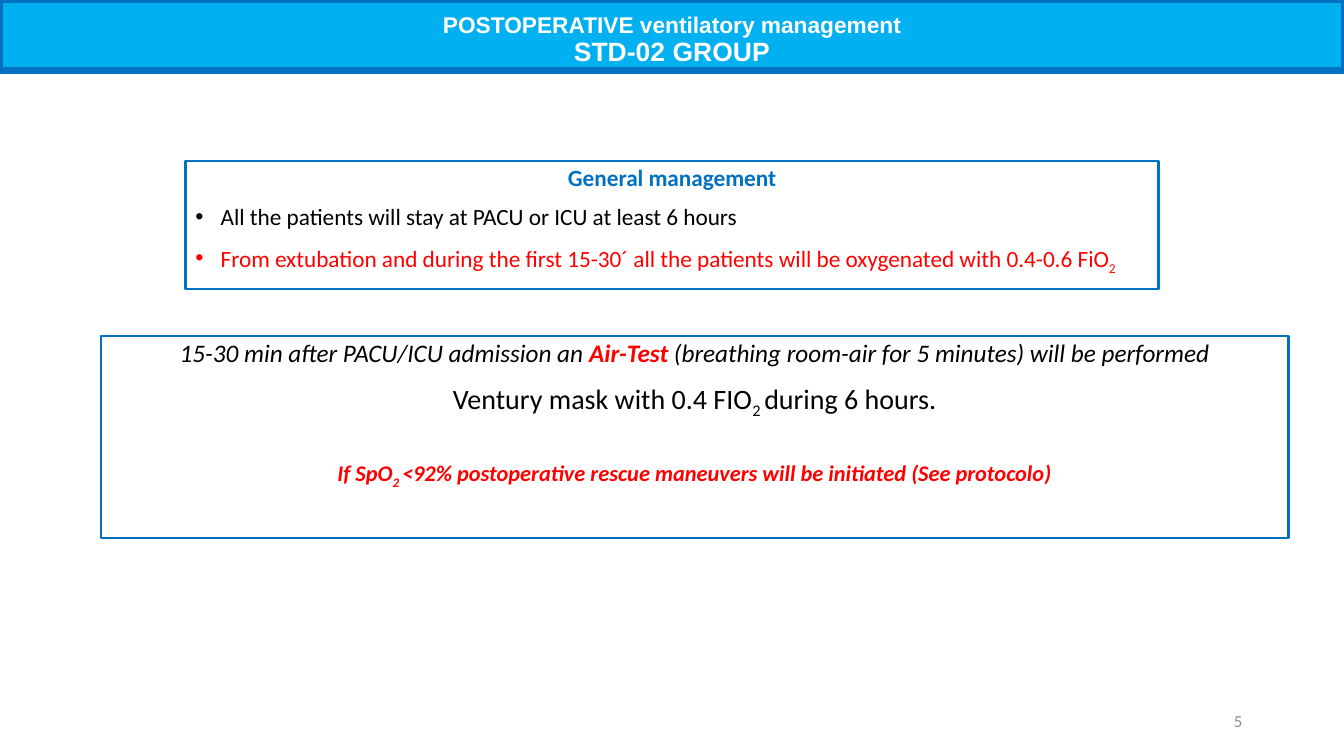
from pptx import Presentation
from pptx.util import Inches, Pt
from pptx.dml.color import RGBColor as RGB
from pptx.enum.shapes import MSO_SHAPE as Shape
from pptx.enum.text import PP_ALIGN as Align, MSO_ANCHOR as Anchor
from pptx.oxml.ns import qn
from lxml import etree

COLORS = {"sky": "00B0F0", "blue": "0070C0", "red": "FF0000",
          "black": "000000", "white": "FFFFFF", "gray": "8C8C8C"}


def write(para, text, size=16, color="black", font="Calibri",
          bold=False, italic=False, sub=False):
    run = para.add_run()
    run.text = text
    face = run.font
    face.name, face.size = font, Pt(size)
    face.bold, face.italic = bold, italic
    face.color.rgb = RGB.from_string(COLORS[color])
    if sub:
        run._r.get_or_add_rPr().set("baseline", "-25000")


def outline(shape, width):
    shape.line.color.rgb = RGB.from_string(COLORS["blue"])
    shape.line.width = Pt(width)


deck = Presentation()
deck.slide_width, deck.slide_height = Inches(13.33), Inches(7.5)
slide = deck.slides.add_slide(deck.slide_layouts[5])

# Title bar
title = slide.shapes.title
title.left, title.top = Inches(0), Inches(0)
title.width, title.height = Inches(13.33), Inches(0.7)
title.fill.solid()
title.fill.fore_color.rgb = RGB.from_string(COLORS["sky"])
outline(title, 4.5)
frame = title.text_frame
frame.word_wrap = True
frame.vertical_anchor = Anchor.MIDDLE
frame.margin_top, frame.margin_bottom = Inches(0.12), Inches(0.02)
head = frame.paragraphs[0]
head.alignment, head.line_spacing = Align.CENTER, 0.9
write(head, "POSTOPERATIVE ventilatory management", size=16.2,
      color="white", font="Arial", bold=True)
head.add_line_break()
write(head, "STD-02 GROUP", size=18.9, color="white", font="Arial", bold=True)

# Each box: place, then paragraphs as (bullet, space before, runs)
alert = dict(color="red", bold=True, italic=True)
care = dict(size=16.6)
warn = dict(size=16.6, color="red")
boxes = [
    ((1.84, 1.6, 9.65, 1.27), [
        (False, 10, [("General management",
                      dict(size=16.6, color="blue", bold=True))]),
        (True, 10, [("All the patients will stay at PACU or ICU "
                     "at least 6 hours", care)]),
        (True, 10, [("From extubation and during the first 15-30´ all the "
                     "patients will be oxygenated with 0.4-0.6 FiO", warn),
                    ("2", dict(warn, sub=True))]),
    ]),
    ((1, 3.33, 11.78, 2.01), [
        (False, 10, [("15-30 min after PACU/ICU admission an ",
                      dict(size=18, italic=True)),
                     ("Air-Test", dict(alert, size=18)),
                     (" (breathing room-air for 5 minutes) will be performed",
                      dict(size=18, italic=True))]),
        (False, 10, [("Ventury mask with 0.4 FIO", dict(size=20)),
                     ("2 ", dict(size=20, sub=True)),
                     ("during 6 hours.", dict(size=20))]),
        (False, 31, [("If SpO", alert),
                     ("2 ", dict(alert, sub=True)),
                     ("<92% postoperative rescue maneuvers will be initiated "
                      "(See protocolo)", alert)]),
    ]),
]
for place, paras in boxes:
    box = slide.shapes.add_shape(Shape.RECTANGLE, *map(Inches, place))
    box.shadow.inherit = False
    box.fill.background()
    outline(box, 1.5)
    frame = box.text_frame
    frame.word_wrap = True
    frame.vertical_anchor = Anchor.TOP
    for i, (bullet, gap, runs) in enumerate(paras):
        para = frame.add_paragraph() if i else frame.paragraphs[0]
        para.alignment = Align.LEFT if bullet else Align.CENTER
        para.line_spacing, para.space_before = 0.9, Pt(gap)
        if bullet:
            props = para._p.get_or_add_pPr()
            props.set("marL", str(Inches(0.25)))
            props.set("indent", str(Inches(-0.25)))
            etree.SubElement(props, qn("a:buFont")).set("typeface", "Arial")
            etree.SubElement(props, qn("a:buChar")).set("char", "•")
        for text, style in runs:
            write(para, text, **style)

# Page number
page = slide.shapes.add_textbox(Inches(9.42), Inches(6.95),
                                Inches(3), Inches(0.4))
page.text_frame.word_wrap = True
page.text_frame.vertical_anchor = Anchor.MIDDLE
foot = page.text_frame.paragraphs[0]
foot.alignment = Align.RIGHT
write(foot, "5", size=12, color="gray")

deck.save("out.pptx")
